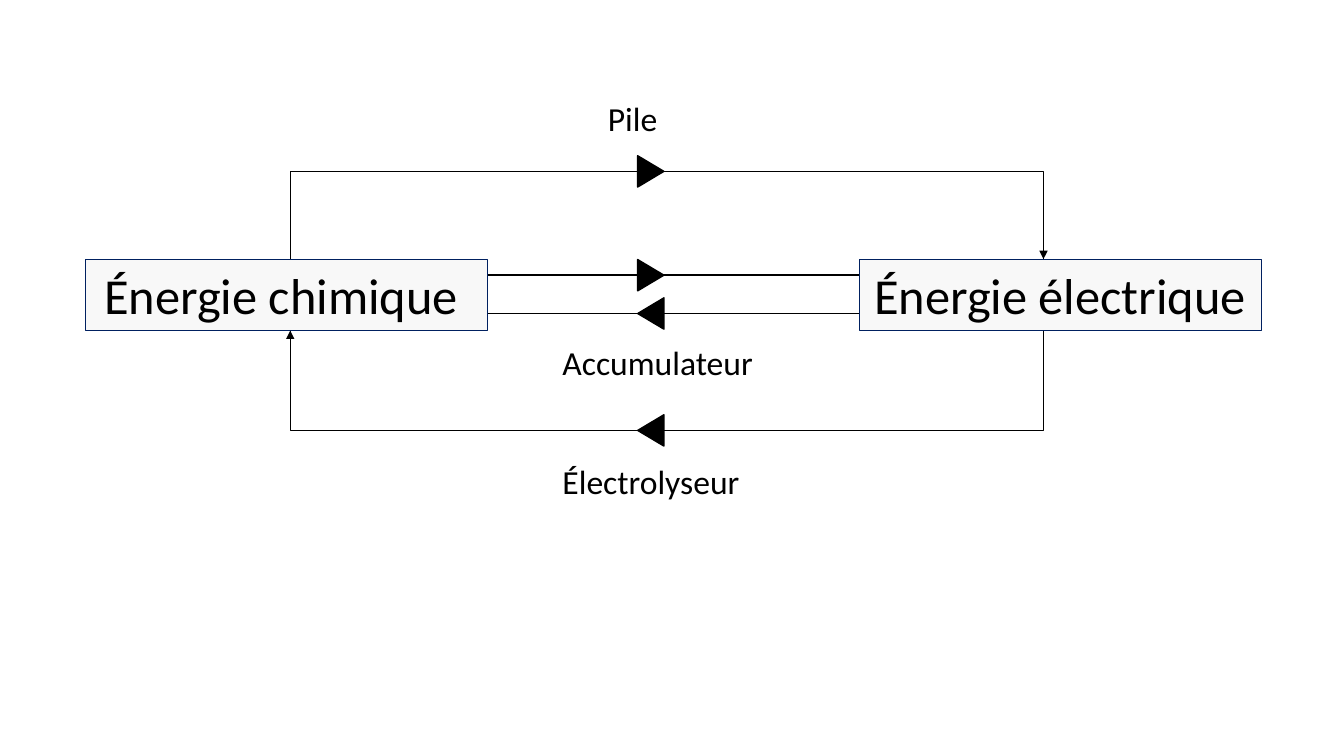
from lxml.etree import SubElement
from pptx import Presentation
from pptx.dml.color import RGBColor
from pptx.enum.shapes import MSO_CONNECTOR as Connector, MSO_SHAPE as Shape
from pptx.enum.text import MSO_ANCHOR as Anchor, PP_ALIGN as Align
from pptx.oxml.ns import qn
from pptx.util import Inches, Pt

WIDTH, HEIGHT = Inches(13.33), Inches(7.5)
FONT, INK, PANEL, NAVY = "Calibri", "000000", "F8F8F8", "002060"

# Shares of the slide, in percent of its width (x) or height (y)
ENERGIES = [("Énergie chimique ", 6.38), ("Énergie électrique ", 63.92)]
ENERGY_TOP, ENERGY_WIDTH, ENERGY_HEIGHT = 34.27, 29.93, 9.47
LOOP_LEFT, LOOP_RIGHT, LOOP_TOP, LOOP_BOTTOM = 21.6, 77.64, 22.67, 56.93
EXCHANGE_ROWS = [36.4, 41.47]
DIRECTIONS = [(LOOP_TOP, 90), (LOOP_BOTTOM, 270),
              (EXCHANGE_ROWS[0], 90), (EXCHANGE_ROWS[1], 270)]
MARKER_X, MARKER_WIDTH, MARKER_HEIGHT = 48.42, 2.33, 3.47
DEVICES = [("Pile", 44.49, 12.27, 13.65),
           ("Accumulateur", 41.11, 44.53, 24.46),
           ("Électrolyseur", 41.11, 60.27, 24.46)]
DEVICE_HEIGHT = 6.67


def x(share):
    return round(WIDTH * share / 100)


def y(share):
    return round(HEIGHT * share / 100)


def color(value):
    return RGBColor.from_string(value)


def box(slide, kind, left, top, width, height, fill, line, weight):
    shape = slide.shapes.add_shape(kind, x(left), y(top), x(width), y(height))
    shape.shadow.inherit = False
    if fill:
        shape.fill.solid()
        shape.fill.fore_color.rgb = color(fill)
    else:
        shape.fill.background()
    shape.line.color.rgb = color(line)
    shape.line.width = Pt(weight)
    return shape


def write(shape, text, size, align):
    frame = shape.text_frame
    frame.word_wrap = True
    frame.text = text
    paragraph = frame.paragraphs[0]
    paragraph.alignment = align
    paragraph.font.name, paragraph.font.size = FONT, Pt(size)
    paragraph.font.color.rgb = color(INK)


def connect(slide, start, end, weight, arrow=False):
    line = slide.shapes.add_connector(
        Connector.STRAIGHT, x(start[0]), y(start[1]), x(end[0]), y(end[1]))
    line.line.color.rgb = color(INK)
    line.line.width = Pt(weight)
    if arrow:
        SubElement(line.line._get_or_add_ln(), qn("a:tailEnd"), type="triangle")
    SubElement(line._element.spPr, qn("a:effectLst"))


def main():
    """Draw the conversions between chemical and electrical energy."""
    deck = Presentation()
    deck.slide_width, deck.slide_height = WIDTH, HEIGHT
    slide = deck.slides.add_slide(deck.slide_layouts[6])

    box(slide, Shape.RECTANGLE, LOOP_LEFT, LOOP_TOP, LOOP_RIGHT - LOOP_LEFT,
        LOOP_BOTTOM - LOOP_TOP, None, INK, 1)
    for energy, left in ENERGIES:
        panel = box(slide, Shape.RECTANGLE, left, ENERGY_TOP, ENERGY_WIDTH,
                    ENERGY_HEIGHT, PANEL, NAVY, 0.75)
        write(panel, energy, 36, Align.CENTER)
        panel.text_frame.vertical_anchor = Anchor.TOP

    energy_bottom = ENERGY_TOP + ENERGY_HEIGHT
    connect(slide, (LOOP_RIGHT, 27.33), (LOOP_RIGHT, ENERGY_TOP), 0.5, True)
    connect(slide, (LOOP_LEFT, 53.47), (LOOP_LEFT, energy_bottom), 0.5, True)
    for row in EXCHANGE_ROWS:
        connect(slide, (ENERGIES[0][1] + ENERGY_WIDTH, row), (ENERGIES[1][1], row), 1)

    for row, turn in DIRECTIONS:
        marker = box(slide, Shape.ISOSCELES_TRIANGLE, MARKER_X - MARKER_WIDTH / 2,
                     row - MARKER_HEIGHT / 2, MARKER_WIDTH, MARKER_HEIGHT, INK, INK, 1)
        marker.rotation = turn
    for device, left, top, width in DEVICES:
        label = slide.shapes.add_textbox(x(left), y(top), x(width), y(DEVICE_HEIGHT))
        write(label, device, 24, Align.LEFT)

    deck.save("out.pptx")


if __name__ == "__main__":
    main()
